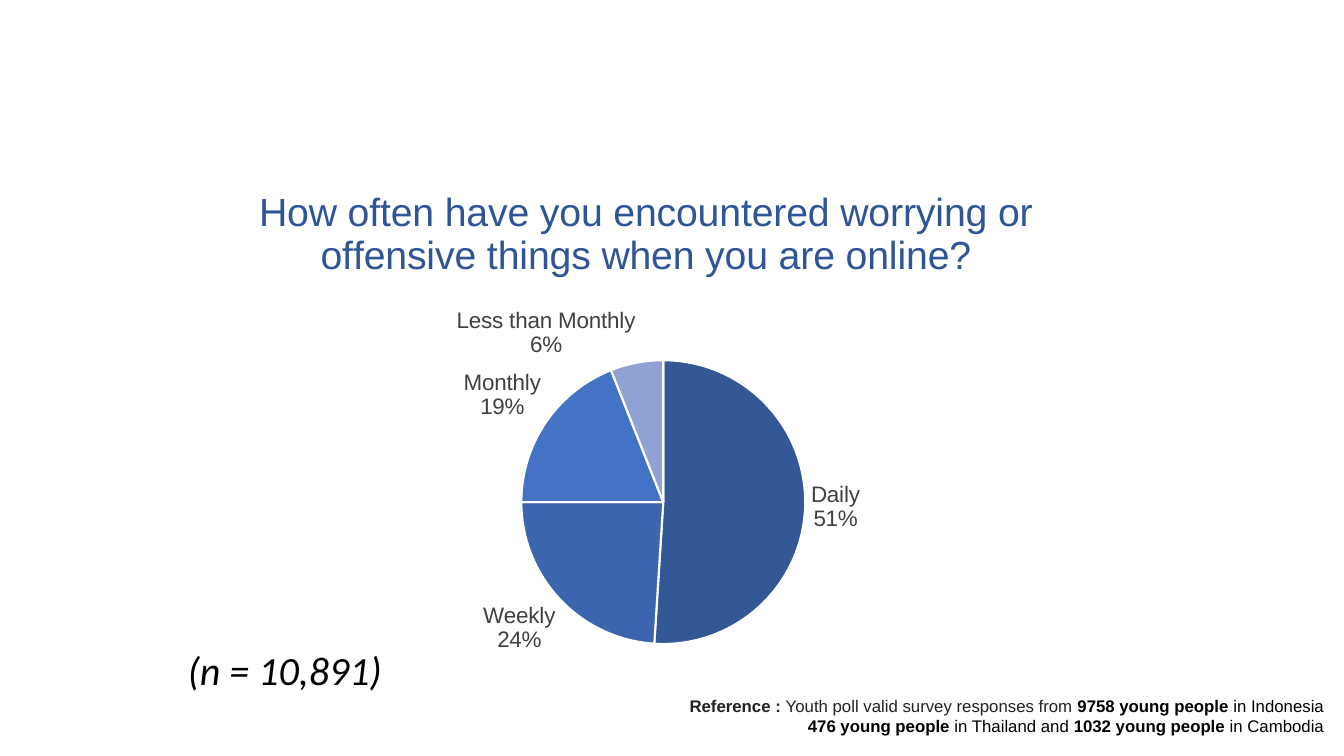
from dataclasses import dataclass

from lxml import etree
from pptx import Presentation
from pptx.chart.chart import Chart
from pptx.chart.data import CategoryChartData
from pptx.dml.color import RGBColor
from pptx.enum.chart import XL_CHART_TYPE, XL_LABEL_POSITION
from pptx.enum.text import MSO_ANCHOR, PP_ALIGN
from pptx.oxml.ns import qn
from pptx.slide import Slide
from pptx.util import Inches, Pt

PIE = XL_CHART_TYPE.PIE
OUTSIDE = XL_LABEL_POSITION.OUTSIDE_END
CENTER, RIGHT = PP_ALIGN.CENTER, PP_ALIGN.RIGHT
MIDDLE = MSO_ANCHOR.MIDDLE

BLACK = RGBColor(0x00, 0x00, 0x00)
WHITE = RGBColor(0xFF, 0xFF, 0xFF)
INK = RGBColor(0x22, 0x22, 0x22)
GRAY = RGBColor(0x40, 0x40, 0x40)
BLUE = RGBColor(0x2F, 0x55, 0x97)


@dataclass(frozen=True)
class Slice:
    name: str
    share: int
    color: RGBColor


@dataclass(frozen=True)
class Span:
    text: str
    bold: bool = False
    color: RGBColor = BLACK


SLICES = [
    Slice("Daily", 51, RGBColor(0x34, 0x57, 0x95)),
    Slice("Weekly", 24, RGBColor(0x3C, 0x65, 0xAE)),
    Slice("Monthly", 19, RGBColor(0x44, 0x72, 0xC4)),
    Slice("Less than Monthly", 6, RGBColor(0x90, 0xA2, 0xD3)),
]
QUESTION = ("How often have you encountered worrying or offensive things "
            "when you are online?")
SOURCE = [
    [Span("Reference : ", True, INK),
     Span("Youth poll valid survey responses from ", color=INK),
     Span("9758 young people", True),
     Span(" in Indonesia")],
    [Span("476 young people", True),
     Span(" in Thailand and "),
     Span("1032 young people", True),
     Span(" in Cambodia")],
]


def set_layout(part: etree._Element, **values: float | str) -> None:
    """Place a chart part by hand, in fractions of the chart area."""
    layout = part.find(qn("c:layout"))
    if layout is None:
        layout = etree.Element(qn("c:layout"))
        text = part.find(qn("c:tx"))
        part.insert(0 if text is None else part.index(text) + 1, layout)
    manual = etree.SubElement(layout, qn("c:manualLayout"))
    for tag, value in values.items():
        etree.SubElement(manual, qn(f"c:{tag}")).set("val", str(value))


def add_heading(chart: Chart) -> None:
    chart.has_title = True
    title = chart.chart_title
    run = title.text_frame.paragraphs[0].add_run()
    run.text = QUESTION
    font = run.font
    font.name, font.size, font.bold = "Arial", Pt(28), False
    font.color.rgb = BLUE
    title.include_in_layout = False
    set_layout(title._element, xMode="edge", yMode="edge", x=0.12, y=0.02)


def add_pie(slide: Slide) -> None:
    data = CategoryChartData()
    data.categories = [item.name for item in SLICES]
    data.add_series("Series 1", [item.share for item in SLICES])
    chart = slide.shapes.add_chart(
        PIE, Inches(1.32), Inches(1.68), Inches(9.83), Inches(5.12), data
    ).chart
    chart.has_legend = False
    chart.font.name, chart.font.size = "Arial", Pt(10)
    chart.font.color.rgb = BLACK
    add_heading(chart)

    plot = chart.plots[0]
    plot.vary_by_categories = True
    for index, item in enumerate(SLICES):
        form = plot.series[0].points[index].format
        form.fill.solid()
        form.fill.fore_color.rgb = item.color
        form.line.color.rgb = WHITE
        form.line.width = Pt(1.5)

    plot.has_data_labels = True
    labels = plot.data_labels
    labels.show_value = False
    labels.show_category_name = labels.show_percentage = True
    labels.number_format, labels.number_format_is_linked = "0%", False
    labels.position = OUTSIDE
    labels.font.name, labels.font.size = "Arial", Pt(16)
    labels.font.color.rgb = GRAY
    mark = labels._element.find(qn("c:showBubbleSize"))
    split = etree.Element(qn("c:separator"))
    split.text = "\n"
    mark.addnext(split)

    area = chart._chartSpace.find(".//" + qn("c:plotArea"))
    set_layout(area, layoutTarget="inner", xMode="edge", yMode="edge",
               x=0.39, y=0.37, w=0.29, h=0.55)


def add_source(slide: Slide) -> None:
    box = slide.shapes.add_textbox(
        Inches(4.91), Inches(6.8), Inches(8.32), Inches(0.61))
    frame = box.text_frame
    frame.word_wrap = True
    frame.margin_left = frame.margin_right = Inches(0.1)
    frame.margin_top = frame.margin_bottom = Inches(0.1)
    para = frame.paragraphs[0]
    para.alignment = RIGHT
    for index, line in enumerate(SOURCE):
        if index:
            para.add_line_break()
        for span in line:
            run = para.add_run()
            run.text = span.text
            font = run.font
            font.name, font.size, font.bold = "Arial", Pt(12), span.bold
            font.color.rgb = span.color


def set_title(slide: Slide) -> None:
    title = slide.shapes.title
    title.left, title.top = Inches(1.4), Inches(5.95)
    title.width, title.height = Inches(2.85), Inches(1.45)
    frame = title.text_frame
    frame.word_wrap = True
    frame.vertical_anchor = MIDDLE
    frame.margin_left = frame.margin_right = Inches(0.1)
    frame.margin_top = frame.margin_bottom = Inches(0.05)
    para = frame.paragraphs[0]
    para.alignment, para.line_spacing = CENTER, 0.9
    run = para.add_run()
    run.text = "(n = 10,891)"
    font = run.font
    font.name, font.size, font.italic = "Calibri", Pt(28.6), True
    font.color.rgb = BLACK


def main() -> None:
    deck = Presentation()
    deck.slide_width, deck.slide_height = Inches(13.33), Inches(7.5)
    slide = deck.slides.add_slide(deck.slide_layouts[5])
    add_source(slide)
    add_pie(slide)
    set_title(slide)
    deck.save("out.pptx")


if __name__ == "__main__":
    main()
